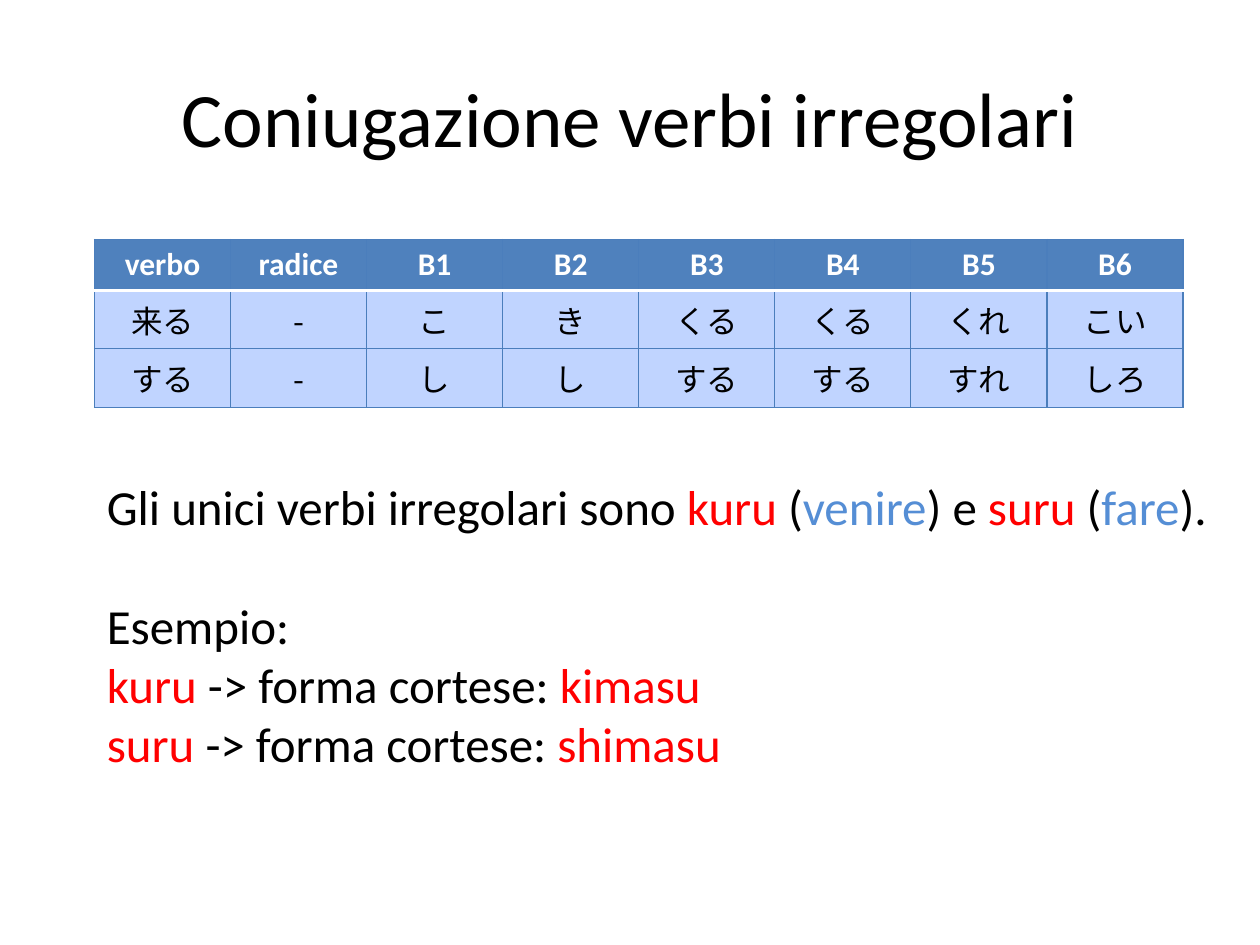
import dataclasses

import pptx
import pptx.dml.color
import pptx.enum.text
import pptx.oxml.ns
import pptx.util
from lxml import etree

Inches = pptx.util.Inches
Pt = pptx.util.Pt
Align = pptx.enum.text.PP_ALIGN
Anchor = pptx.enum.text.MSO_ANCHOR


@dataclasses.dataclass(frozen=True)
class Theme:
    black: str = "000000"
    white: str = "FFFFFF"
    red: str = "FF0000"
    blue: str = "558ED5"
    head: str = "4F81BD"
    body: str = "C0D4FF"
    grid: str = "4B7EBC"
    latin: str = "Calibri"
    kana: str = "Noto Sans CJK JP"
    title: int = 44
    text: int = 28
    cell: int = 18


def rgb(code):
    return pptx.dml.color.RGBColor.from_string(code)


def add_tag(parent, tag, **attrs):
    return etree.SubElement(parent, pptx.oxml.ns.qn(tag), attrs)


class Deck:
    def __init__(self, theme):
        self.theme = theme
        self.prs = pptx.Presentation()
        self.prs.slide_width = Inches(10)
        self.prs.slide_height = Inches(7.5)
        self.slide = self.prs.slides.add_slide(self.prs.slide_layouts[5])

    def run(self, para, text, color, size, name=None, bold=False):
        run = para.add_run()
        run.text = text
        name = name or self.theme.latin
        style = {"name": name, "size": Pt(size), "bold": bold}
        for key, value in style.items():
            setattr(run.font, key, value)
        run.font.color.rgb = rgb(color)
        add_tag(run.font._element, "a:ea", typeface=name)

    def title(self, text, left, top, width, height):
        shape = self.slide.shapes.title
        place = {"left": left, "top": top, "width": width, "height": height}
        for key, value in place.items():
            setattr(shape, key, Inches(value))
        shape.text_frame.vertical_anchor = Anchor.MIDDLE
        para = shape.text_frame.paragraphs[0]
        para.alignment = Align.CENTER
        self.run(para, text, self.theme.black, self.theme.title)

    def text(self, lines, left, top, width, height):
        """Each line is a list of (text, color) parts."""
        box = self.slide.shapes.add_textbox(*map(Inches, (left, top, width, height)))
        frame = box.text_frame
        frame.word_wrap = False
        frame.auto_size = pptx.enum.text.MSO_AUTO_SIZE.SHAPE_TO_FIT_TEXT
        for i, parts in enumerate(lines):
            para = frame.add_paragraph() if i else frame.paragraphs[0]
            for text, color in parts:
                self.run(para, text, color, self.theme.text)

    def edge(self, cell, side, color, width):
        line = add_tag(cell._tc.get_or_add_tcPr(), f"a:ln{side}", w=str(Pt(width)))
        add_tag(add_tag(line, "a:solidFill"), "a:srgbClr", val=color)

    def table(self, rows, left, top, width, height):
        theme = self.theme
        place = map(Inches, (left, top, width, height))
        table = self.slide.shapes.add_table(len(rows), len(rows[0]), *place).table
        for r, row in enumerate(rows):
            for c, text in enumerate(row):
                cell = table.cell(r, c)
                # The header is parted from the body by a thick white rule
                rule = {0: "B", 1: "T"}.get(r)
                for side in "LRTB":
                    look = (theme.white, 2) if side == rule else (theme.grid, 0.75)
                    self.edge(cell, side, *look)
                cell.fill.solid()
                cell.fill.fore_color.rgb = rgb(theme.body if r else theme.head)
                para = cell.text_frame.paragraphs[0]
                para.alignment = Align.CENTER
                style = (theme.black, theme.cell, theme.kana) if r else (
                    theme.white, theme.cell, theme.latin, True)
                self.run(para, text, *style)


def main():
    theme = Theme()
    black, red, blue = theme.black, theme.red, theme.blue
    deck = Deck(theme)
    deck.title("Coniugazione verbi irregolari", 0.5, 0.3, 9, 1.25)
    deck.table([
        ["verbo", "radice", "B1", "B2", "B3", "B4", "B5", "B6"],
        ["来る", "-", "こ", "き", "くる", "くる", "くれ", "こい"],
        ["する", "-", "し", "し", "する", "する", "すれ", "しろ"],
    ], 0.75, 1.9, 8.64, 1.22)
    deck.text([[
        ("Gli unici verbi irregolari sono ", black),
        ("kuru ", red), ("(", black), ("venire", blue), (") e ", black),
        ("suru ", red), ("(", black), ("fare", blue), (").", black),
    ]], 0.75, 3.73, 9.03, 0.57)
    forms = {"kuru ": "kimasu", "suru ": "shimasu"}
    deck.text([[("Esempio:", black)]] + [
        [(verb, red), ("-> forma cortese: ", black), (form, red)]
        for verb, form in forms.items()
    ], 0.75, 4.68, 5.13, 1.51)
    deck.prs.save("out.pptx")


if __name__ == "__main__":
    main()
